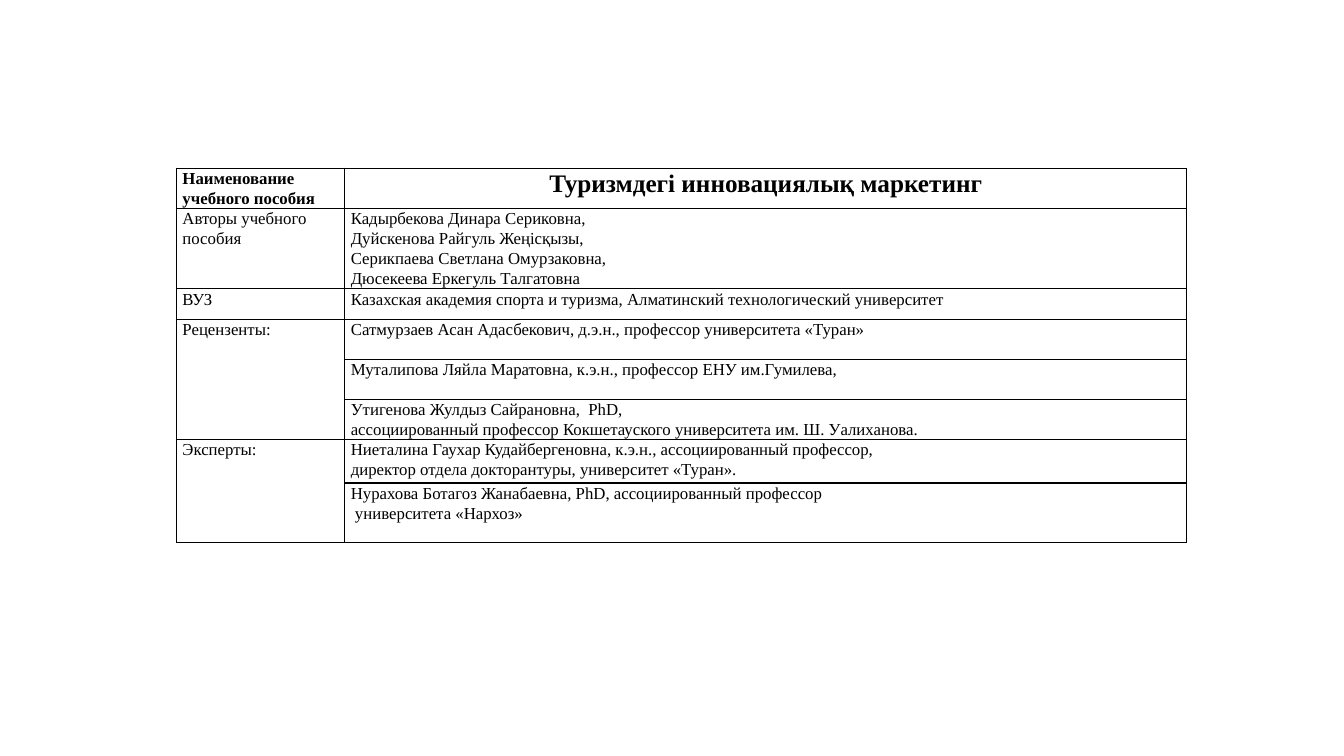
from lxml import etree
from pptx import Presentation
from pptx import util as u
from pptx.dml.color import RGBColor
from pptx.enum import text
from pptx.oxml import ns

FONT = "Times New Roman"
INK = "000000"
COLS = [1.67, 8.35]
# Row height, label, text; an empty label joins the cell above
ROWS = [
    (0.39, "Наименование учебного пособия", "Туризмдегі инновациялық маркетинг"),
    (0.8, "Авторы учебного пособия",
     "Кадырбекова Динара Сериковна,\nДуйскенова Райгуль Жеңісқызы,\n"
     "Серикпаева Светлана Омурзаковна,\nДюсекеева Еркегуль Талгатовна"),
    (0.3, "ВУЗ", "Казахская академия спорта и туризма, "
     "Алматинский технологический университет"),
    (0.4, "Рецензенты:",
     "Сатмурзаев Асан Адасбекович, д.э.н., профессор университета «Туран»"),
    (0.4, "", "Муталипова Ляйла Маратовна, к.э.н., профессор ЕНУ им.Гумилева,"),
    (0.39, "", "Утигенова Жулдыз Сайрановна,  PhD,\n"
     "ассоциированный профессор Кокшетауского университета им. Ш. Уалиханова."),
    (0.43, "Эксперты:",
     "Ниеталина Гаухар Кудайбергеновна, к.э.н., ассоциированный профессор,\n"
     "директор отдела докторантуры, университет «Туран»."),
    (0.59, "", "Нурахова Ботагоз Жанабаевна, PhD, ассоциированный профессор\n"
     " университета «Нархоз»"),
]


def color(code):
    return RGBColor.from_string(code)


def border(cell):
    """Draw a thin line on all four sides of a cell."""
    props = cell._tc.get_or_add_tcPr()
    for side in ("a:lnL", "a:lnR", "a:lnT", "a:lnB"):
        line = etree.SubElement(props, ns.qn(side), w=str(u.Pt(1)))
        fill = etree.SubElement(line, ns.qn("a:solidFill"))
        etree.SubElement(fill, ns.qn("a:srgbClr"), val=INK)


def write(cell, words, size=12, bold=False, align=text.PP_ALIGN.LEFT):
    """Fill a cell with one paragraph per line of words."""
    cell.text_frame.text = words
    for para in cell.text_frame.paragraphs:
        para.line_spacing = 1.07
        para.alignment = align
        for run in para.runs:
            run.font.name = FONT
            run.font.size = u.Pt(size)
            run.font.bold = bold
            run.font.color.rgb = color(INK)


def style(cell):
    """Set the margins, border and empty fill of a cell."""
    cell.margin_left = cell.margin_right = u.Inches(0.06)
    cell.margin_top = cell.margin_bottom = 0
    border(cell)
    cell.fill.background()


def book_table(slide, left, top):
    """Place the table of book details at the given corner."""
    high = sum(row[0] for row in ROWS)
    box = [u.Inches(n) for n in (left, top, sum(COLS), high)]
    table = slide.shapes.add_table(len(ROWS), len(COLS), *box).table
    table.first_row = table.horz_banding = False
    for col, wide in zip(table.columns, COLS):
        col.width = u.Inches(wide)

    # Text of each row
    for i, (tall, label, words) in enumerate(ROWS):
        table.rows[i].height = u.Inches(tall)
        head = i == 0
        for cell in table.rows[i].cells:
            style(cell)
        if label:
            write(table.cell(i, 0), label, bold=head)
        if head:
            write(table.cell(i, 1), words, 18, True, text.PP_ALIGN.CENTER)
        else:
            write(table.cell(i, 1), words)

    # Labels that span several rows
    starts = [i for i, row in enumerate(ROWS) if row[1]]
    for start, end in zip(starts, starts[1:] + [len(ROWS)]):
        if end - start > 1:
            table.cell(start, 0).merge(table.cell(end - 1, 0))


def main():
    deck = Presentation()
    deck.slide_width, deck.slide_height = u.Inches(13.33), u.Inches(7.5)
    slide = deck.slides.add_slide(deck.slide_layouts[6])
    book_table(slide, 1.75, 1.67)
    deck.save("out.pptx")


if __name__ == "__main__":
    main()
